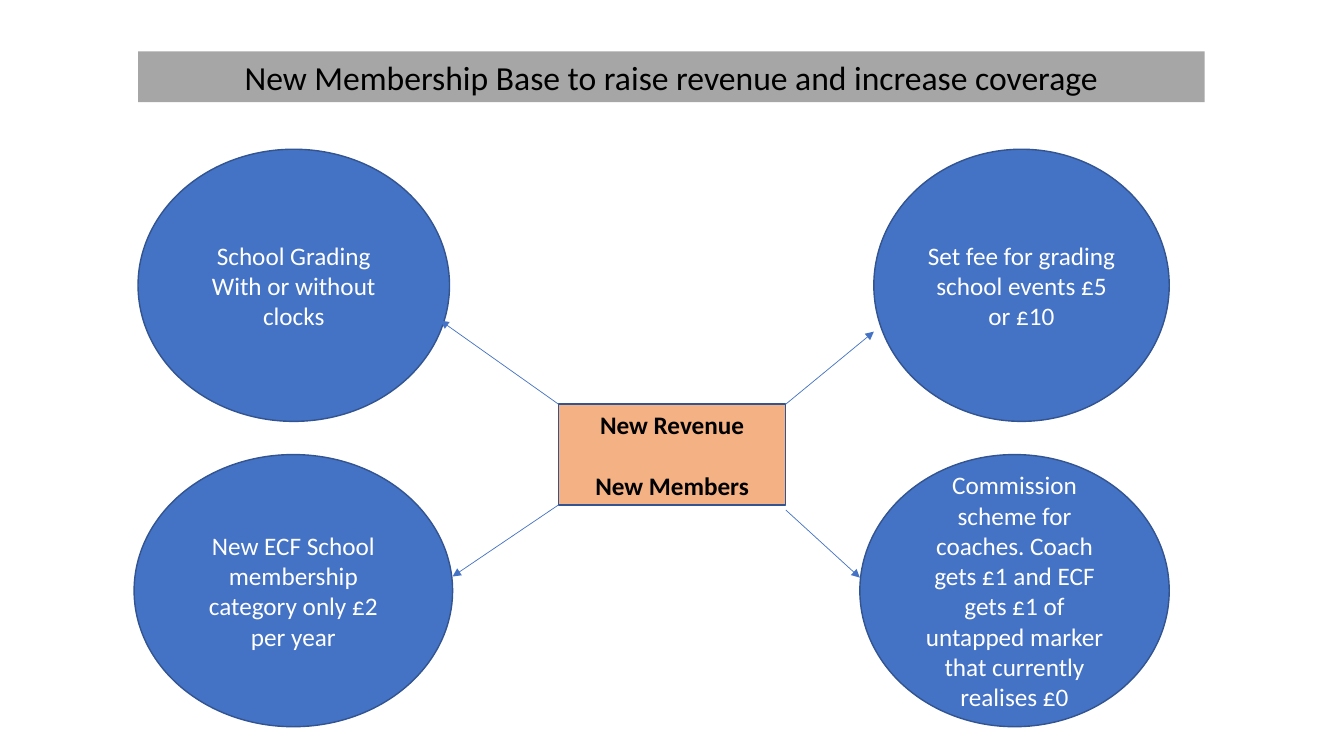
from dataclasses import dataclass

from lxml import etree
from pptx import Presentation
from pptx.dml.color import RGBColor
from pptx.enum.shapes import MSO_CONNECTOR, MSO_SHAPE
from pptx.enum.text import MSO_ANCHOR, MSO_AUTO_SIZE, PP_ALIGN
from pptx.oxml.ns import qn
from pptx.util import Pt

CIRCLE, RECT = MSO_SHAPE.FLOWCHART_CONNECTOR, MSO_SHAPE.RECTANGLE
STRAIGHT = MSO_CONNECTOR.STRAIGHT
CENTER, MIDDLE, TOP = PP_ALIGN.CENTER, MSO_ANCHOR.MIDDLE, MSO_ANCHOR.TOP
NO_FIT = MSO_AUTO_SIZE.NONE

FONT = "Calibri"
COLORS = {
    "blue": "4472C4",
    "outline": "325491",
    "orange": "F4B183",
    "grey": "A6A6A6",
    "white": "FFFFFF",
    "black": "000000",
}


@dataclass
class Node:
    kind: int
    left: float
    top: float
    width: float
    height: float
    lines: list[str]
    fill: str = "blue"
    color: str = "white"
    bold: bool = False


@dataclass
class Arrow:
    x1: float
    y1: float
    x2: float
    y2: float


# Two rows of circles around the central box
ROW_1, ROW_2, CIRCLE_H = 106.6, 324.7, 194.4
BOX_L, BOX_R, BOX_T, BOX_B = 398.9, 561.3, 288.7, 360.7

NODES = [
    Node(CIRCLE, 98.6, ROW_1, 222.5, CIRCLE_H,
         ["School Grading With or without clocks"]),
    Node(CIRCLE, 624.2, ROW_1, 211, CIRCLE_H,
         ["Set fee for grading school events £5 or £10"]),
    Node(CIRCLE, 95.8, ROW_2, 227.5, CIRCLE_H,
         ["New ECF School membership category only £2 per year"]),
    Node(CIRCLE, 614.2, ROW_2, 221, CIRCLE_H,
         ["Commission scheme for coaches. Coach gets £1 and ECF gets £1 of "
          "untapped marker that currently realises £0"]),
    Node(RECT, BOX_L, BOX_T, BOX_R - BOX_L, BOX_B - BOX_T,
         ["New Revenue", "New Members"], "orange", "black", True),
]
ARROWS = [
    Arrow(BOX_R, BOX_T, 624.2, 236.9),
    Arrow(BOX_R, 364.3, 614.2, 412.6),
    Arrow(BOX_L, BOX_B, 323.3, 411.8),
    Arrow(BOX_L, BOX_T, 314.6, 229),
]


def rgb(name: str) -> RGBColor:
    return RGBColor.from_string(COLORS[name])


def write_lines(tf, lines: list[str], size: float, color: str, bold: bool) -> None:
    tf.word_wrap = True
    for i, line in enumerate(lines):
        p = tf.paragraphs[0] if i == 0 else tf.add_paragraph()
        p.alignment = CENTER
        p.line_spacing = 1.0
        p.space_before = Pt(22 if i else 0)
        r = p.add_run()
        r.text = line
        r.font.name, r.font.size, r.font.bold = FONT, Pt(size), bold
        r.font.color.rgb = rgb(color)


def add_node(slide, node: Node) -> None:
    s = slide.shapes.add_shape(node.kind, Pt(node.left), Pt(node.top),
                               Pt(node.width), Pt(node.height))
    s.shadow.inherit = False
    s.fill.solid()
    s.fill.fore_color.rgb = rgb(node.fill)
    s.line.color.rgb = rgb("outline")
    s.line.width = Pt(1)
    s.text_frame.vertical_anchor = MIDDLE
    write_lines(s.text_frame, node.lines, 18, node.color, node.bold)


def add_arrow(slide, arrow: Arrow) -> None:
    s = slide.shapes.add_connector(STRAIGHT, Pt(arrow.x1), Pt(arrow.y1),
                                   Pt(arrow.x2), Pt(arrow.y2))
    s.line.color.rgb = rgb("blue")
    s.line.width = Pt(0.5)
    etree.SubElement(s.line._get_or_add_ln(), qn("a:tailEnd"), type="triangle")
    etree.SubElement(s._element.spPr, qn("a:effectLst"))


def format_title(s, text: str) -> None:
    s.left, s.top, s.width, s.height = Pt(98.6), Pt(36.7), Pt(761.8), Pt(36.3)
    s.fill.solid()
    s.fill.fore_color.rgb = rgb("grey")
    s.text_frame.auto_size = NO_FIT
    s.text_frame.vertical_anchor = TOP
    write_lines(s.text_frame, [text], 24, "black", False)


def main() -> None:
    prs = Presentation()
    prs.slide_width, prs.slide_height = Pt(960), Pt(540)
    slide = prs.slides.add_slide(prs.slide_layouts[5])

    # Title bar
    format_title(slide.shapes.title,
                 "New Membership Base to raise revenue and increase coverage")

    # Circles and central box
    for node in NODES:
        add_node(slide, node)

    # Arrows from the box to the circles
    for arrow in ARROWS:
        add_arrow(slide, arrow)

    prs.save("out.pptx")


if __name__ == "__main__":
    main()
